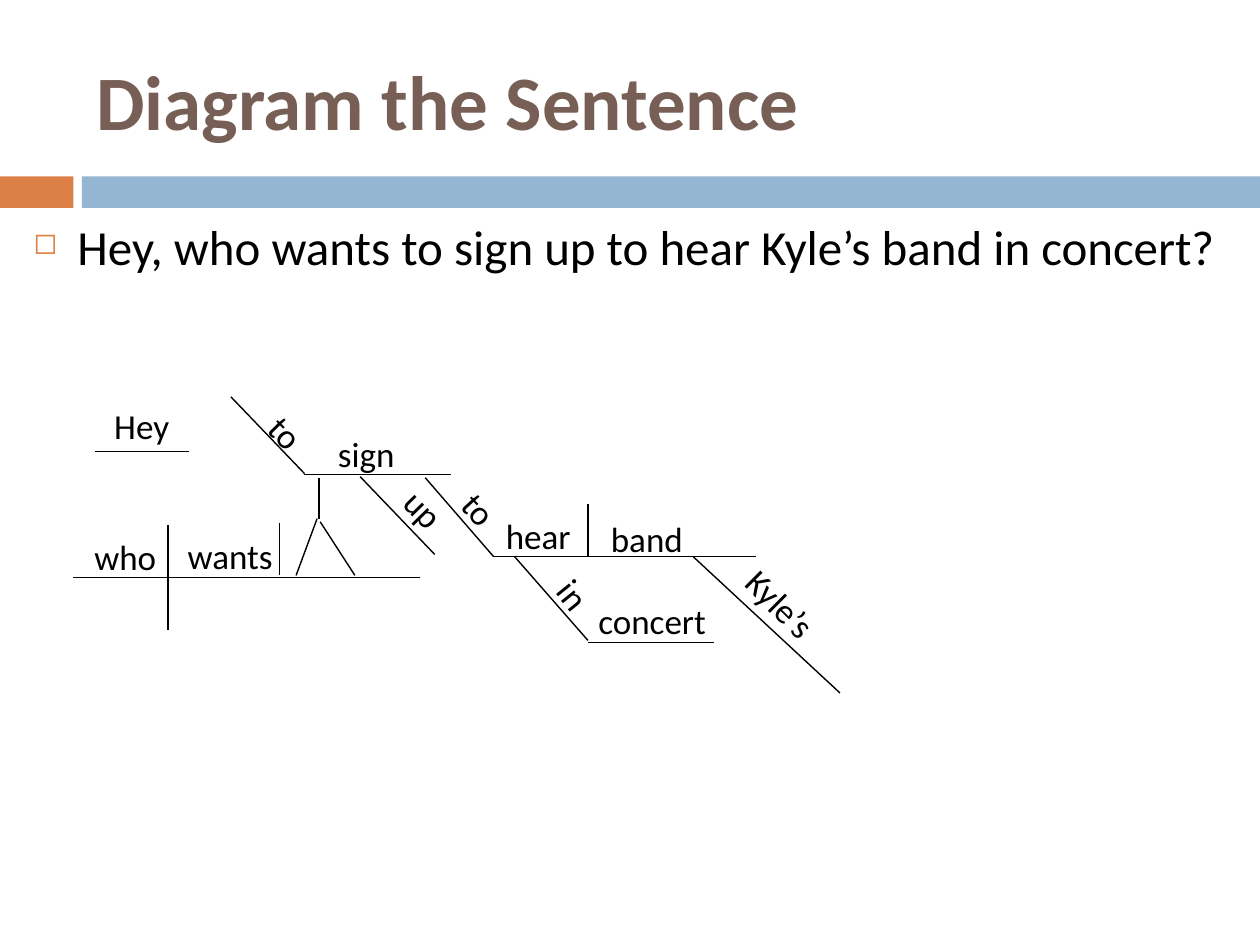
from dataclasses import dataclass

from lxml import etree
from pptx import Presentation
from pptx import util as u
from pptx.dml.color import RGBColor
from pptx.enum import shapes, text
from pptx.oxml.ns import qn

# The slide is a grid of 120 columns by 90 rows
WIDTH, HEIGHT = u.Inches(10), u.Inches(7.5)
COLUMNS, ROWS = 120, 90
FONT = "Calibri"
COLORS = {"accent": "DD8047", "band": "94B6D2", "title": "775F55", "ink": "000000"}


@dataclass
class Bar:
    left: float
    width: float
    color: str


@dataclass
class Word:
    label: str
    left: float
    top: float
    width: float
    angle: float = 0


@dataclass
class Stroke:
    x1: float
    y1: float
    x2: float
    y2: float


BARS = [Bar(0, 7, "accent"), Bar(7.8, 112.2, "band")]

STROKES = [
    # Baselines
    Stroke(9, 43, 18, 43),
    Stroke(7, 55, 40, 55),
    Stroke(29, 45.2, 43, 45.2),
    Stroke(47, 53, 72, 53),
    Stroke(56, 61.2, 68, 61.2),
    # Upright dividers
    Stroke(16, 50, 16, 60),
    Stroke(26.6, 49.8, 26.6, 54.8),
    Stroke(56, 53, 56, 48),
    # Pedestal under the infinitive
    Stroke(30.4, 45.5, 30.4, 49.4),
    Stroke(28.2, 54.8, 30.2, 49.4),
    Stroke(30.5, 49.7, 33.8, 54.8),
    # Slanted modifiers
    Stroke(22, 37.8, 29, 45.1),
    Stroke(34.3, 45.4, 41.4, 52.8),
    Stroke(40.5, 45.5, 47, 53),
    Stroke(49, 53, 56, 61),
    Stroke(66, 53, 80, 66),
]

WORDS = [
    Word("Hey", 9.7, 37.9, 9),
    Word("who", 7.8, 50.4, 9),
    Word("wants", 16.7, 50.3, 10.8),
    Word("to", 24.4, 39.1, 6.7, 45.6),
    Word("sign", 31, 40.6, 10.7),
    Word("up", 37.1, 46.6, 8, 45.6),
    Word("to", 42.8, 46.4, 6.7, 47.7),
    Word("hear", 47, 48.4, 10.6),
    Word("band", 57, 48.7, 10.6),
    Word("in", 52, 54.4, 5.9, 51),
    Word("concert", 55.8, 56.5, 13.3),
    Word(" Kyle’s", 67.8, 57, 17.3, 44.8),
]


def across(columns: float) -> int:
    return round(WIDTH * columns / COLUMNS)


def down(rows: float) -> int:
    return round(HEIGHT * rows / ROWS)


def color(name: str) -> RGBColor:
    return RGBColor.from_string(COLORS[name])


def draw_bar(page, bar: Bar) -> None:
    shape = page.shapes.add_shape(shapes.MSO_SHAPE.RECTANGLE, across(bar.left),
                                  down(16.8), across(bar.width), down(3))
    shape.shadow.inherit = False
    shape.fill.solid()
    shape.fill.fore_color.rgb = color(bar.color)
    shape.line.fill.background()


def draw_text(page, word: Word, height: float = 5.25, size: float = 20,
              ink: str = "ink", bold: bool = False):
    box = page.shapes.add_textbox(across(word.left), down(word.top),
                                  across(word.width), down(height))
    box.rotation = word.angle
    box.text_frame.word_wrap = True
    para = box.text_frame.paragraphs[0]
    para.text = word.label
    para.font.name = FONT
    para.font.size = u.Pt(size)
    para.font.bold = bold
    para.font.color.rgb = color(ink)
    return box


def draw_stroke(page, stroke: Stroke) -> None:
    line = page.shapes.add_connector(
        shapes.MSO_CONNECTOR.STRAIGHT, across(stroke.x1), down(stroke.y1),
        across(stroke.x2), down(stroke.y2))
    line.line.color.rgb = color("ink")
    line.line.width = u.Pt(0.79)
    etree.SubElement(line._element.spPr, qn("a:effectLst"))


def add_bullet(para) -> None:
    properties = para._p.get_or_add_pPr()
    indent = u.Inches(0.35)
    properties.set("marL", str(indent))
    properties.set("indent", str(-indent))
    tint = etree.SubElement(properties, qn("a:buClr"))
    etree.SubElement(tint, qn("a:srgbClr"), val=COLORS["accent"])
    etree.SubElement(properties, qn("a:buSzPct"), val="60000")
    etree.SubElement(properties, qn("a:buChar"), char="◻")
    # Bullet settings come before the default run properties
    properties.append(properties.find(qn("a:defRPr")))


def main() -> None:
    deck = Presentation()
    deck.slide_width, deck.slide_height = WIDTH, HEIGHT
    page = deck.slides.add_slide(deck.slide_layouts[6])

    # Title and divider
    for bar in BARS:
        draw_bar(page, bar)
    title = draw_text(page, Word("Diagram the Sentence", 8, 3, 107), 13, 44, "title", True)
    title.text_frame.vertical_anchor = text.MSO_ANCHOR.MIDDLE

    # Sentence
    sentence = Word("Hey, who wants to sign up to hear Kyle’s band in concert?", 2, 20, 118)
    para = draw_text(page, sentence, 15, 28).text_frame.paragraphs[0]
    para.space_before = u.Pt(7)
    add_bullet(para)

    # Sentence diagram
    for stroke in STROKES:
        draw_stroke(page, stroke)
    for word in WORDS:
        draw_text(page, word)

    deck.save("out.pptx")


if __name__ == "__main__":
    main()
